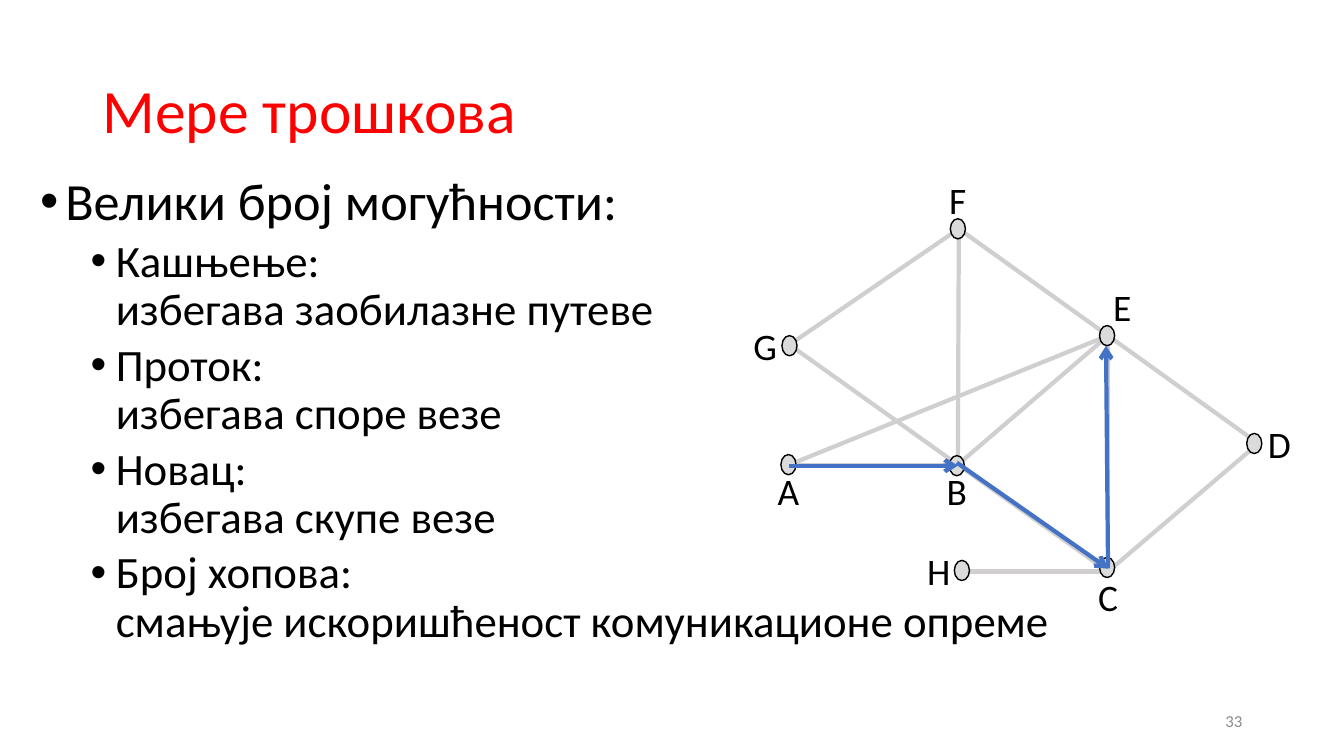
from dataclasses import dataclass

from lxml import etree
from pptx import Presentation
from pptx.dml.color import RGBColor
from pptx.enum.shapes import MSO_CONNECTOR, MSO_SHAPE
from pptx.enum.text import MSO_ANCHOR, PP_ALIGN
from pptx.oxml.ns import qn
from pptx.util import Inches, Pt

LINE = MSO_CONNECTOR.STRAIGHT
OVAL = MSO_SHAPE.OVAL
TOP, MID = MSO_ANCHOR.TOP, MSO_ANCHOR.MIDDLE
LEFT, MIDDLE, RIGHT = PP_ALIGN.LEFT, PP_ALIGN.CENTER, PP_ALIGN.RIGHT

FONT = "Calibri"
BLACK, RED, BLUE = "000000", "FF0000", "4472C4"
PALE, SILVER, GRAY = "D0CECE", "DBDBDB", "8C8C8C"
DOT = (0.15, 0.2)
LABEL = (0.44, 0.55)

Point = tuple[float, float]


@dataclass
class Node:
    hub: Point
    dot: Point
    label: Point


@dataclass
class Item:
    text: str
    size: float
    level: int
    indent: float
    before: float


NODES = {
    "A": Node((7.83, 4.61), (7.82, 4.61), (7.82, 4.87)),
    "B": Node((9.5, 4.61), (9.49, 4.62), (9.49, 4.87)),
    "C": Node((10.99, 5.67), (10.98, 5.63), (10.99, 5.92)),
    "D": Node((12.48, 4.4), (12.44, 4.4), (12.69, 4.4)),
    "E": Node((10.99, 3.33), (10.98, 3.33), (11.13, 3.04)),
    "F": Node((9.51, 2.27), (9.5, 2.27), (9.5, 1.98)),
    "G": Node((7.83, 3.42), (7.83, 3.43), (7.59, 3.43)),
    "H": Node((9.5, 5.67), (9.54, 5.66), (9.31, 5.66)),
}
EDGES = "AB BC CE BE AE BF BG GF FE ED CD CH".split()
ROUTE = [
    ((7.83, 4.62), (9.5, 4.62)),
    ((9.49, 4.59), (10.99, 5.64)),
    ((10.99, 5.64), (10.97, 3.43)),
]
POINTS = [
    "Кашњење:\vизбегава заобилазне путеве",
    "Проток:\vизбегава споре везе",
    "Новац:\vизбегава скупе везе",
    "Број хопова:\vсмањује искоришћеност комуникационе опреме",
]
ITEMS = [Item("Велики број могућности:", 37.3, 0, 0.25, 10)]
ITEMS += [Item(point, 32, 1, 0.75, 5) for point in POINTS]


def color(code: str) -> RGBColor:
    return RGBColor.from_string(code)


def center(mid: Point, size: Point) -> tuple[float, ...]:
    return (mid[0] - size[0] / 2, mid[1] - size[1] / 2, *size)


def style(para, text: str, *, size: float, hue: str = BLACK,
          align=LEFT, lead: float = 1.0) -> None:
    para.text = text
    para.alignment = align
    para.line_spacing = lead
    for run in para.runs:
        run.font.name = FONT
        run.font.size = Pt(size)
        run.font.color.rgb = color(hue)


def frame(shapes, box: tuple[float, ...], anchor=MID, wrap: bool = True):
    body = shapes.add_textbox(*map(Inches, box)).text_frame
    body.word_wrap = wrap
    body.vertical_anchor = anchor
    return body


def write(shapes, box: tuple[float, ...], text: str, *,
          wrap: bool = True, **form) -> None:
    style(frame(shapes, box, wrap=wrap).paragraphs[0], text, **form)


def bullet(para, item: Item) -> None:
    style(para, item.text, size=item.size, lead=0.9)
    para.level = item.level
    para.space_before = Pt(item.before)
    props = para._p.get_or_add_pPr()
    props.set("marL", str(Inches(item.indent)))
    props.set("indent", str(Inches(-0.25)))
    etree.SubElement(props, qn("a:buFont")).set("typeface", "Arial")
    etree.SubElement(props, qn("a:buChar")).set("char", "•")


def link(shapes, start: Point, end: Point, hue: str,
         arrow: bool = False) -> None:
    line = shapes.add_connector(LINE, *map(Inches, start + end))
    line.line.color.rgb = color(hue)
    line.line.width = Pt(3)
    props = line._element.spPr
    if arrow:
        etree.SubElement(props.find(qn("a:ln")), qn("a:tailEnd")).set("type", "arrow")
    etree.SubElement(props, qn("a:effectLst"))


def mark(shapes, mid: Point) -> None:
    dot = shapes.add_shape(OVAL, *map(Inches, center(mid, DOT)))
    dot.shadow.inherit = False
    dot.fill.solid()
    dot.fill.fore_color.rgb = color(SILVER)
    dot.line.color.rgb = color(BLACK)
    dot.line.width = Pt(1)


def main() -> None:
    deck = Presentation()
    deck.slide_width, deck.slide_height = Inches(13.33), Inches(7.5)
    slide = deck.slides.add_slide(deck.slide_layouts[6])
    shapes = slide.shapes

    write(shapes, (0.92, 0.4, 11.5, 1.45), "Мере трошкова",
          size=44, hue=RED, lead=0.9)
    body = frame(shapes, (0.3, 1.69, 11.28, 5.22), anchor=TOP)
    for index, item in enumerate(ITEMS):
        bullet(body.add_paragraph() if index else body.paragraphs[0], item)

    graph = shapes.add_group_shape().shapes
    for start, end in EDGES:
        link(graph, NODES[start].hub, NODES[end].hub, PALE)
    for node in NODES.values():
        mark(graph, node.dot)
    for name, node in NODES.items():
        write(graph, center(node.label, LABEL), name,
              wrap=False, size=26.7, align=MIDDLE)
    for start, end in ROUTE:
        link(graph, start, end, BLUE, arrow=True)

    write(shapes, (9.42, 6.95, 3, 0.4), "33", size=12, hue=GRAY, align=RIGHT)
    deck.save("out.pptx")


if __name__ == "__main__":
    main()
